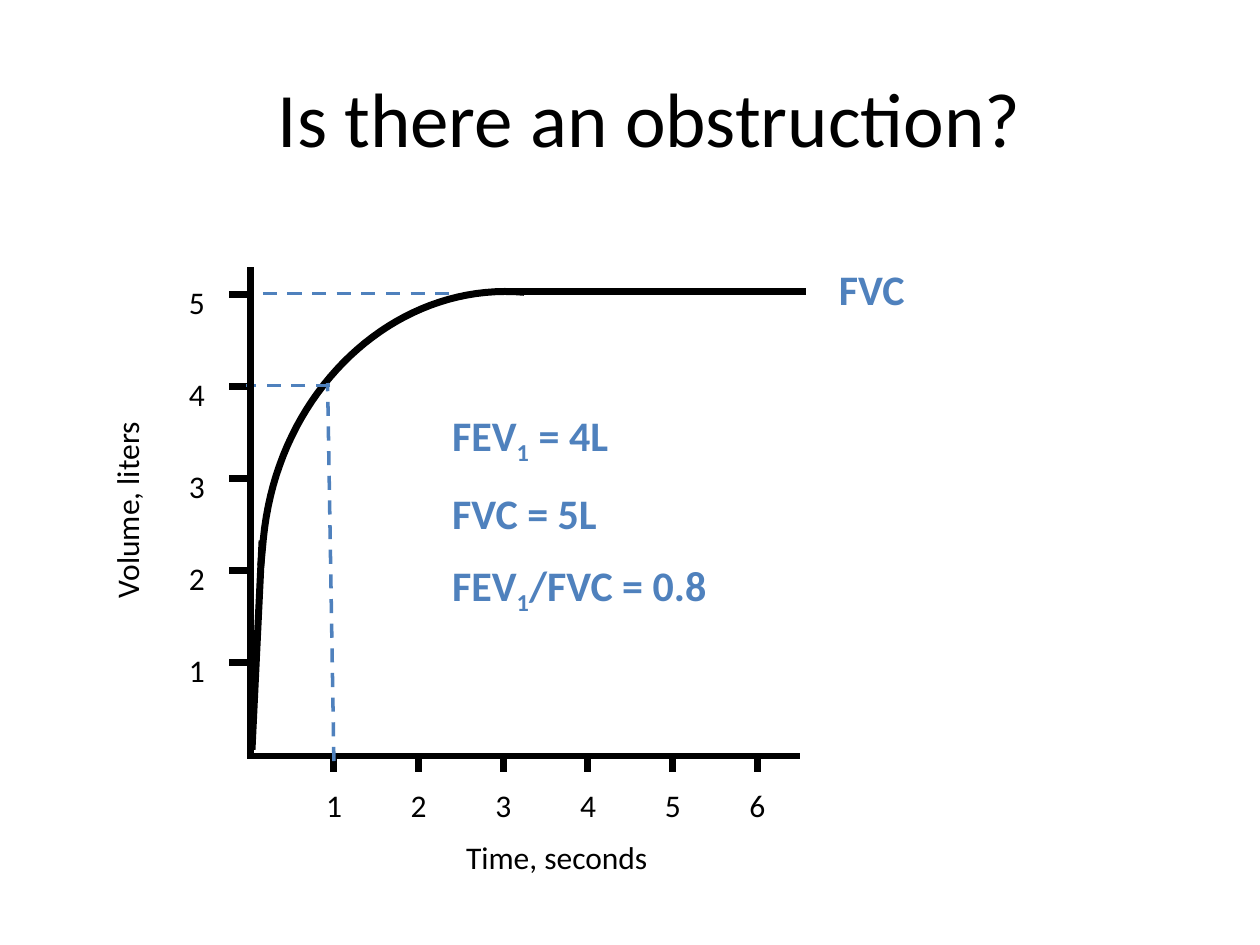
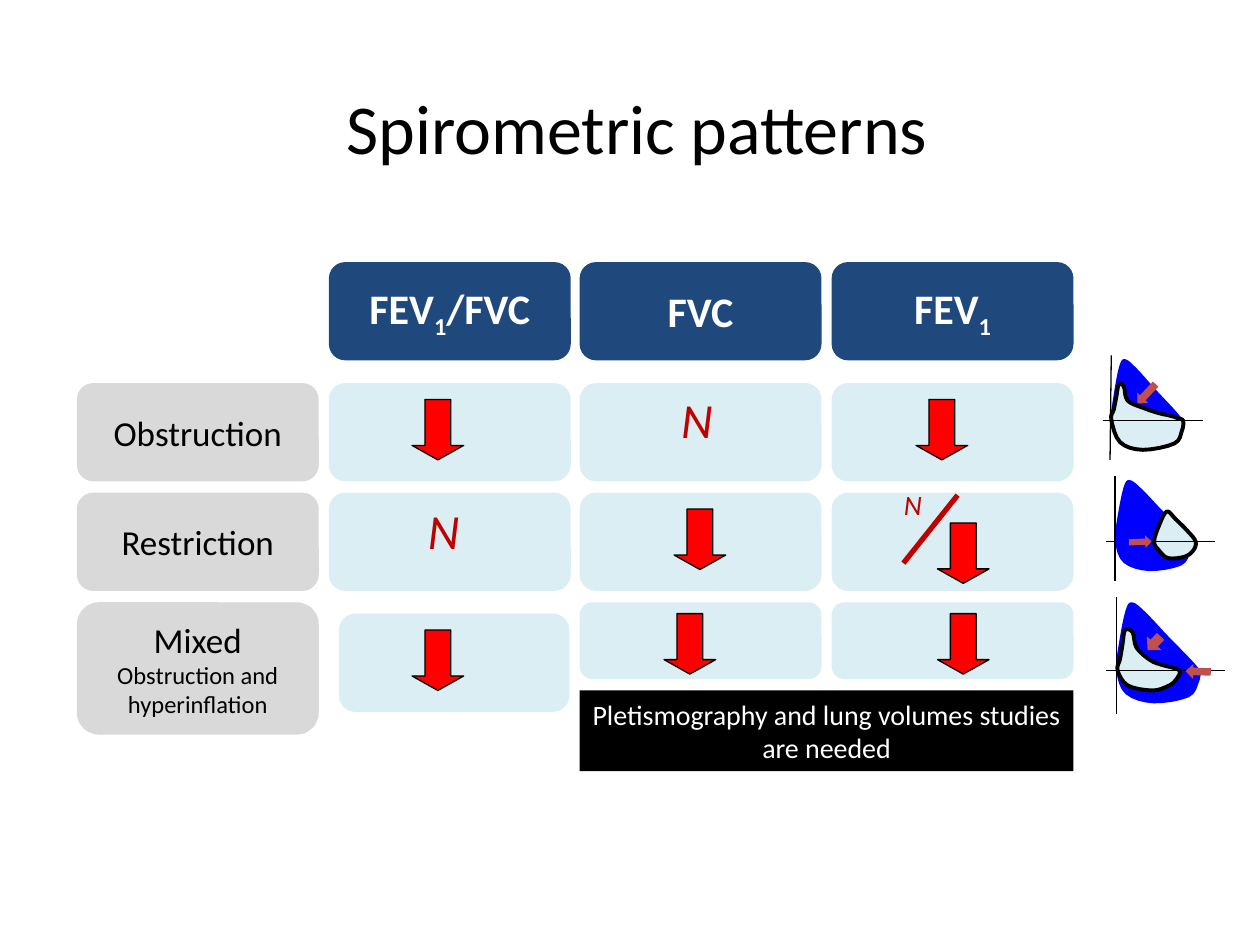
from dataclasses import dataclass

from lxml import etree
from pptx import Presentation
from pptx.dml.color import RGBColor
from pptx.enum.dml import MSO_LINE
from pptx.enum.shapes import MSO_CONNECTOR, MSO_SHAPE
from pptx.enum.text import MSO_ANCHOR, PP_ALIGN
from pptx.oxml.ns import qn
from pptx.util import Inches, Pt

LEFT, CENTER = PP_ALIGN.LEFT, PP_ALIGN.CENTER
TOP, MIDDLE = MSO_ANCHOR.TOP, MSO_ANCHOR.MIDDLE
DASH, STRAIGHT = MSO_LINE.DASH, MSO_CONNECTOR.STRAIGHT
ROUND, RECT, DOWN = MSO_SHAPE.ROUNDED_RECTANGLE, MSO_SHAPE.RECTANGLE, MSO_SHAPE.DOWN_ARROW


@dataclass(frozen=True)
class Theme:
    font: str = "Calibri"
    black: RGBColor = RGBColor(0, 0, 0)
    white: RGBColor = RGBColor(255, 255, 255)
    accent: RGBColor = RGBColor(0x4F, 0x81, 0xBD)
    navy: RGBColor = RGBColor(0x1F, 0x49, 0x7D)
    gray: RGBColor = RGBColor(0xD9, 0xD9, 0xD9)
    pale: RGBColor = RGBColor(0xDB, 0xEE, 0xF4)
    lung: RGBColor = RGBColor(0, 0, 255)
    rust: RGBColor = RGBColor(0xC0, 0x50, 0x4D)
    red: RGBColor = RGBColor(255, 0, 0)
    dark: RGBColor = RGBColor(0xC0, 0, 0)
    title: int = 44
    mark: int = 28
    head: int = 24
    row: int = 20
    label: int = 18
    note: int = 16
    small: int = 14


T = Theme()


def write(shape, paras, size, color, bold=False, italic=False, align=LEFT, anchor=TOP):
    """Each paragraph is a tuple of runs; every second run is a subscript."""
    frame = shape.text_frame
    frame.word_wrap = True
    frame.vertical_anchor = anchor
    for i, parts in enumerate(paras):
        para = frame.add_paragraph() if i else frame.paragraphs[0]
        para.alignment = align
        for j, text in enumerate(parts):
            run = para.add_run()
            run.text = text
            font = run.font
            font.name, font.size, font.color.rgb = T.font, Pt(size), color
            font.bold, font.italic = bold, italic
            if j % 2:
                run._r.get_or_add_rPr().set("baseline", "-25000")


def line(slide, ends, color, width, dash=None):
    rule = slide.shapes.add_connector(STRAIGHT, *map(Inches, ends))
    rule.line.color.rgb, rule.line.width = color, Pt(width)
    if dash:
        rule.line.dash_style = dash
    etree.SubElement(rule._element.spPr, qn("a:effectLst"))


deck = Presentation()
deck.slide_width, deck.slide_height = Inches(10), Inches(7.5)
pages = []
for name, size, box in [
    ("Is there an obstruction?", T.title, (1.77, 0.3, 6.77, 1.25)),
    ("Spirometric patterns", T.title - 4, (0.39, 0.59, 9.33, 0.83)),
]:
    page = deck.slides.add_slide(deck.slide_layouts[5])
    title = page.shapes.title
    title.left, title.top, title.width, title.height = map(Inches, box)
    write(title, [(name,)], size, T.black, align=CENTER, anchor=MIDDLE)
    pages.append(page)

# Slide 1: volume against time
graph, table = pages
line(graph, (1.96, 6, 6.35, 6), T.black, 4)
labels = []
for n in range(1, 7):
    x = 2.65 + 0.672 * (n - 1)
    line(graph, (x, 5.98, x, 6.13), T.black, 4)
    labels.append((str(n), x - 0.16, 6.19))
for n in range(1, 6):
    y = 5.26 - 0.73 * (n - 1)
    line(graph, (1.96, y, 1.82, y), T.black, 4)
    labels.append((str(n), 1.4, y - 0.14))
for text, x, y in labels:
    box = graph.shapes.add_textbox(Inches(x), Inches(y), Inches(0.36), Inches(0.4))
    write(box, [(text,)], T.label, T.black)

line(graph, (2, 5.95, 2.08, 4.29), T.black, 4)
line(graph, (4.07, 2.31, 6.4, 2.31), T.black, 4)
bend = [(2.09, 4.28), (2.2, 3.1), (3.13, 2.23), (4.16, 2.32)]
points = [(Inches(2.07), Inches(4.49))]
for step in range(41):
    t = step / 40
    weights = ((1 - t) ** 3, 3 * t * (1 - t) ** 2, 3 * t * t * (1 - t), t ** 3)
    points.append(tuple(Inches(sum(w * p[k] for w, p in zip(weights, bend))) for k in (0, 1)))
pen = graph.shapes.build_freeform(*points[0])
pen.add_line_segments(points[1:], close=False)
curve = pen.convert_to_shape()
curve.shadow.inherit = False
curve.fill.background()
curve.line.color.rgb, curve.line.width = T.black, Pt(4)

for ends in [(2.65, 6.04, 2.6, 3.04), (2.62, 3.06, 1.95, 3.06), (1.89, 2.33, 3.64, 2.33)]:
    line(graph, ends, T.accent, 2, DASH)
line(graph, (1.99, 6.02, 1.99, 2.12), T.black, 4)
line(graph, (1.96, 2.34, 1.82, 2.34), T.black, 4)

ratios = [("FEV", "1", " = 4L"), ("FVC = 5L",), ("FEV", "1", "/FVC = 0.8")]
for paras, spot, size, color, turn in [
    ([("Volume, liters",)], (0.02, 3.55, 2.08, 0.51), T.label, T.black, 270),
    ([("Time, seconds",)], (3.6, 6.6, 2.22, 0.51), T.label, T.black, 0),
    ([("FVC",)], (6.56, 2.04, 0.9, 0.51), T.head, T.accent, 0),
    (ratios, (3.49, 3.2, 3.42, 1.72), T.head, T.accent, 0),
]:
    box = graph.shapes.add_textbox(*map(Inches, spot))
    box.rotation = turn
    write(box, paras, size, color, bold=color == T.accent)
    for para in box.text_frame.paragraphs[1:]:
        para.space_before = Pt(12)

# Slide 2: flow loops beside the table
full = [(0.03, 0.41), (0.11, 0.08), (0.19, 0), (0.35, 0.1), (0.6, 0.32), (0.86, 0.54),
        (0.98, 0.65), (1, 0.67), (0.98, 0.78), (0.86, 0.93), (0.44, 0.99), (0.11, 0.9),
        (0, 0.67)]
loops = [
    ((8.82, 2.85, 0.57, 0.72),
     [(8.84, 3.25), (8.86, 3.15), (8.88, 3.05), (8.92, 3.07), (8.95, 3.18), (9.08, 3.24),
      (9.2, 3.28), (9.29, 3.3), (9.35, 3.32), (9.39, 3.34), (9.38, 3.42), (9.32, 3.52),
      (9.07, 3.57), (8.89, 3.51), (8.82, 3.33)],
     [(8.82, 2.82, 8.81, 3.65), (8.75, 3.34, 9.55, 3.34)],
     [((9.04, 3.02, 0.12, 0.21), 43.2)]),
    ((8.85, 3.81, 0.61, 0.73),
     [(9.2, 4.17), (9.26, 4.06), (9.33, 4.12), (9.43, 4.22), (9.49, 4.3), (9.47, 4.37),
      (9.4, 4.42), (9.27, 4.43), (9.2, 4.37), (9.16, 4.3)],
     [(8.85, 3.78, 8.85, 4.61), (8.78, 4.3, 9.64, 4.3)],
     [((9, 4.21, 0.1, 0.18), 268.1)]),
    ((8.86, 4.78, 0.67, 0.81),
     [(8.89, 5.23), (8.91, 5.11), (8.93, 5), (8.99, 5.02), (9.02, 5.14), (9.13, 5.24),
      (9.23, 5.28), (9.36, 5.32), (9.33, 5.4), (9.26, 5.45), (9.14, 5.48), (8.95, 5.44),
      (8.87, 5.32)],
     [(8.86, 4.74, 8.86, 5.67), (8.78, 5.32, 9.72, 5.32)],
     [((9.08, 5.03, 0.16, 0.15), 43.2), ((9.45, 5.23, 0.12, 0.2), 91.9)]),
]
for (left, top, wide, high), inner, axes, hints in loops:
    outer = [(left + u * wide, top + v * high) for u, v in full]
    for knots, fill in [(outer, T.lung), (inner, T.pale)]:
        # Catmull-Rom spline through the knots
        points = []
        for i in range(len(knots)):
            a, b, c, d = (knots[(i + k) % len(knots)] for k in range(-1, 3))
            for t in (0, 0.25, 0.5, 0.75):
                points.append(tuple(Inches(
                    b[k] + t * (c[k] - a[k]) / 2
                    + t * t * (2 * a[k] - 5 * b[k] + 4 * c[k] - d[k]) / 2
                    + t ** 3 * (3 * b[k] - a[k] - 3 * c[k] + d[k]) / 2) for k in (0, 1)))
        pen = table.shapes.build_freeform(*points[0])
        pen.add_line_segments(points[1:], close=True)
        blob = pen.convert_to_shape()
        blob.shadow.inherit = False
        blob.fill.solid()
        blob.fill.fore_color.rgb = fill
        if fill == T.pale:
            blob.line.color.rgb, blob.line.width = T.black, Pt(2.25)
        else:
            blob.line.fill.background()
    for ends in axes:
        line(table, ends, T.black, 0.75)
    for spot, turn in hints:
        hint = table.shapes.add_shape(DOWN, *map(Inches, spot))
        hint.rotation = turn
        hint.shadow.inherit = False
        hint.fill.solid()
        hint.fill.fore_color.rgb = T.rust
        hint.line.fill.background()

# Slide 2: cells
cols = [2.61, 4.6, 6.6]
rows = [3.04, 3.91, 4.78]
wide, high = 1.92, 0.78
heads = [("FEV", "1", "/FVC"), ("FVC",), ("FEV", "1")]
names = [[("Obstruction",)], [("Restriction",)],
         [("Mixed",), ("Obstruction and hyperinflation",)]]
cells = [(ROUND, (x, 2.08, wide, high), T.navy, [head], T.head, T.white)
         for x, head in zip(cols, heads)]
cells += [(ROUND, (0.61, y, wide, 1.05 if len(name) > 1 else high), T.gray, name, T.row, T.black)
          for y, name in zip(rows, names)]
cells += [(ROUND, (x, y, wide, high), T.pale, [], T.row, T.black)
          for y in rows[:2] for x in cols]
cells += [(ROUND, spot, T.pale, [], T.row, T.black)
          for spot in [(2.69, 4.87, 1.83, high), (cols[1], rows[2], wide, 0.61),
                       (cols[2], rows[2], wide, 0.61)]]
cells.append((RECT, (4.6, 5.48, 3.92, 0.64), T.black,
              [("Pletismography and lung volumes studies are needed",)], T.note, T.white))
for kind, spot, fill, paras, size, color in cells:
    cell = table.shapes.add_shape(kind, *map(Inches, spot))
    cell.shadow.inherit = False
    cell.fill.solid()
    cell.fill.fore_color.rgb = fill
    cell.line.fill.background()
    write(cell, paras, size, color, bold=fill == T.navy, align=CENTER, anchor=MIDDLE)
    for para in cell.text_frame.paragraphs[1:]:
        for run in para.runs:
            run.font.size = Pt(T.small)

# Slide 2: findings
for x, y in [(3.27, 3.17), (7.27, 3.17), (5.35, 4.04), (7.44, 4.15),
             (3.27, 5), (5.27, 4.87), (7.44, 4.87)]:
    drop = table.shapes.add_shape(DOWN, Inches(x), Inches(y), Inches(0.41), Inches(0.48))
    drop.adjustments[1] = 0.28
    drop.shadow.inherit = False
    drop.fill.solid()
    drop.fill.fore_color.rgb = T.red
    drop.line.color.rgb, drop.line.width = T.black, Pt(0.75)
for spot, size in [((5.27, 3.04, 0.52, 0.64), T.mark), ((3.26, 3.92, 0.52, 0.64), T.mark),
                   ((7.05, 3.82, 0.39, 0.41), T.note)]:
    box = table.shapes.add_textbox(*map(Inches, spot))
    write(box, [("N",)], size, T.dark, italic=True, align=CENTER)
line(table, (7.6, 3.93, 7.17, 4.47), T.dark, 3)

deck.save("out.pptx")
